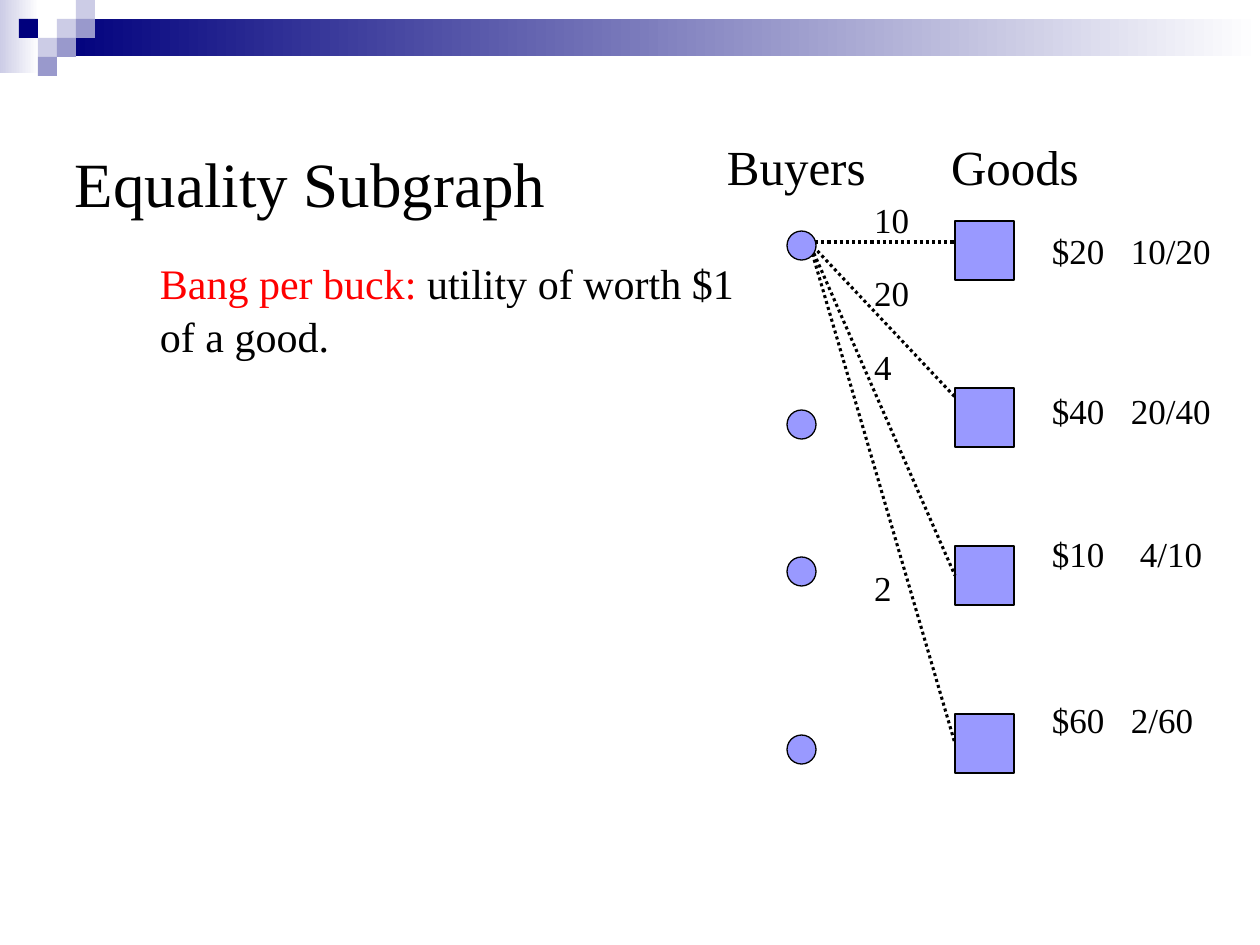
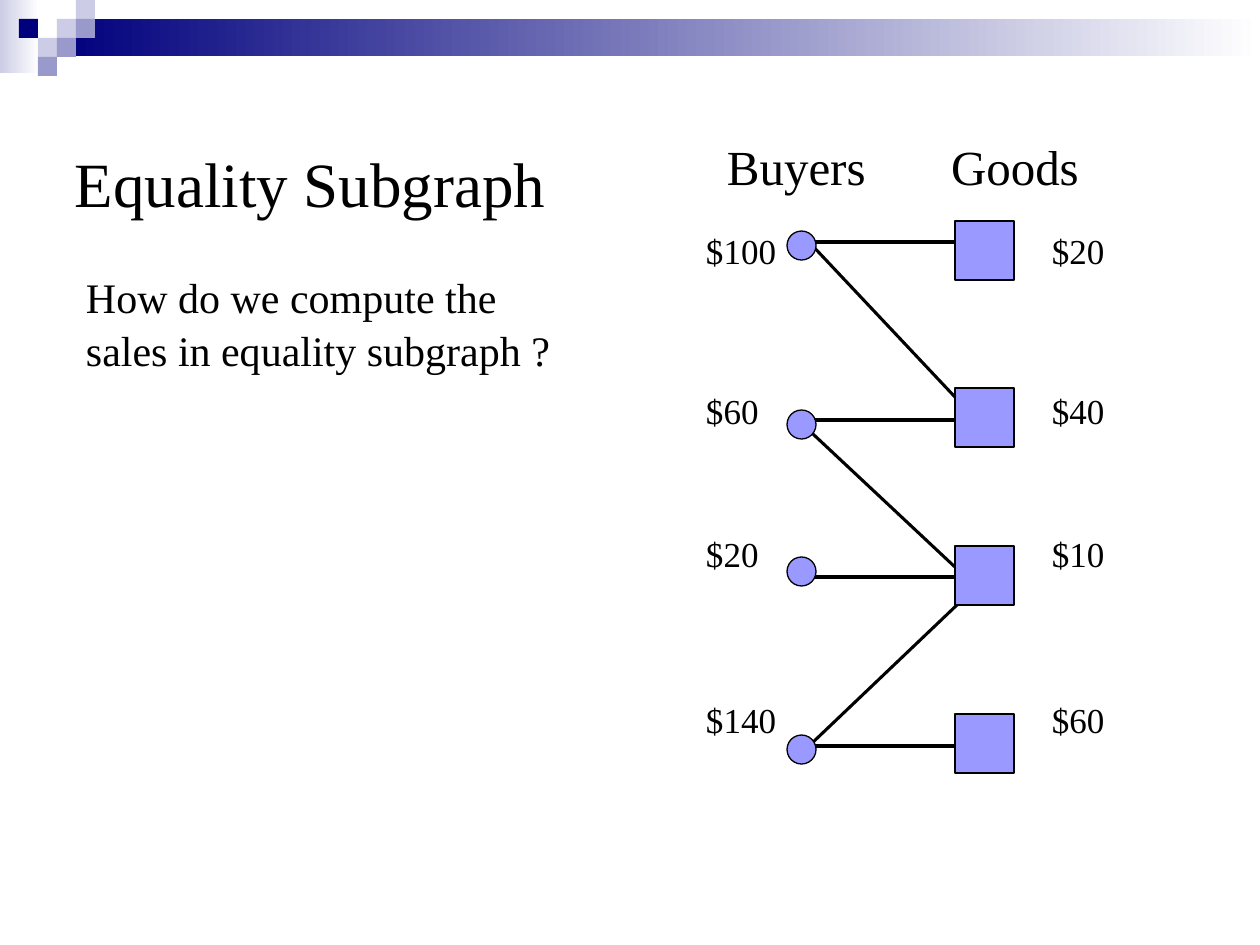
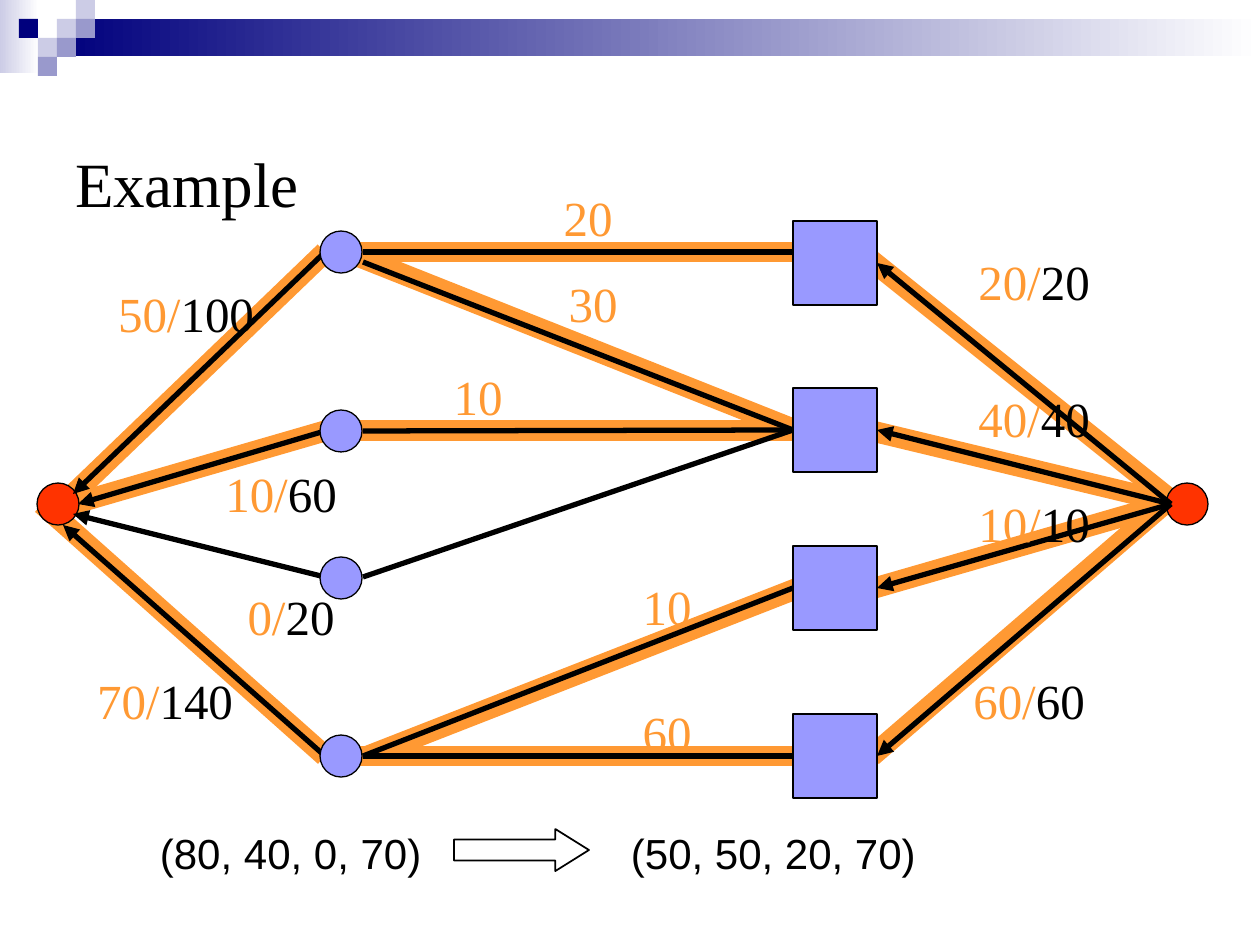
from lxml.etree import SubElement
from pptx import Presentation
from pptx.dml.color import RGBColor
from pptx.enum.dml import MSO_LINE
from pptx.enum.shapes import MSO_CONNECTOR, MSO_SHAPE
from pptx.enum.text import MSO_ANCHOR, PP_ALIGN
from pptx.oxml.ns import qn
from pptx.util import Pt

PX = 914400 / 126
hue = RGBColor.from_string
BLACK, RED, ORANGE, NODE, HUB = "000000", "FF0000", "FF9933", "9999FF", "FF3300"
NAVY, PALE, MID, WHITE = "00007D", "CCCCE6", "9999CC", "FFFFFF"
LEFT, CENTER = PP_ALIGN.LEFT, PP_ALIGN.CENTER
SERIF, SANS = "Times New Roman", "Arial"
FRAME = dict(word_wrap=True, vertical_anchor=MSO_ANCHOR.MIDDLE,
             margin_left=0, margin_right=0, margin_top=0, margin_bottom=0)
TILES = [(3, 1, PALE), (4, 0, PALE), (4, 1, MID), (2, 2, PALE),
         (1, 1, NAVY), (3, 2, MID), (2, 3, MID)]
TILE = 19

# Rows shared by the three graphs
GOODS = [221, 388, 546, 714]
BUYERS = [231, 410, 557, 735]
PRICES = [250, 411, 554, 720]


def box(slide, kind, x, y, wide, tall, fills=(), edge=None):
    """Draw a shape: no fill colour is hollow, two make a gradient."""
    shape = slide.shapes.add_shape(kind, *(round(v * PX) for v in (x, y, wide, tall)))
    shape.shadow.inherit = False
    if len(fills) == 2:
        shape.fill.gradient()
        shape.fill.gradient_angle = 0
        for stop, shade in zip(shape.fill.gradient_stops, fills):
            stop.color.rgb = hue(shade)
        for stop, place in zip(shape.fill.gradient_stops, (0, 1)):
            stop.position = place
    elif fills:
        shape.fill.solid()
        shape.fill.fore_color.rgb = hue(fills[0])
    else:
        shape.fill.background()
    if edge:
        shape.line.color.rgb = hue(BLACK)
        shape.line.width = Pt(edge)
    else:
        shape.line.fill.background()
    return shape


def stroke(slide, ends, shade, width, dash=None, head=False):
    line = slide.shapes.add_connector(MSO_CONNECTOR.STRAIGHT, *(round(v * PX) for v in ends))
    line.line.color.rgb = hue(shade)
    line.line.width = Pt(width)
    if dash:
        line.line.dash_style = dash
    props = line._element.spPr
    if head:
        SubElement(props.find(qn("a:ln")), qn("a:tailEnd"), type="triangle")
    SubElement(props, qn("a:effectLst"))
    return line


# Text: left, middle, width, lines, size, align, font, runs
heads = [(x, 166, 180, 1, 28, LEFT, SERIF, [(word, BLACK)])
         for x, word in [(727, "Buyers"), (951, "Goods")]]
title = (75, 182, 580, 1, 36, LEFT, SERIF, [("Equality Subgraph", BLACK)])
prices = [(1052, y, 75, 1, 20, LEFT, SERIF, [(word, BLACK)])
          for y, word in zip(PRICES, ["$20", "$40", "$10", "$60"])]
bangs = [(x, y, 100, 1, 20, LEFT, SERIF, [(word, BLACK)])
         for x, y, word in zip([1131, 1131, 1140, 1131], PRICES,
                               ["10/20", "20/40", "4/10", "2/60"])]
worths = [(874, y, 70, 1, 20, LEFT, SERIF, [(word, BLACK)])
          for y, word in [(219, "10"), (293, "20"), (367, "4"), (588, "2")]]
funds = [(706, y, 80, 1, 20, LEFT, SERIF, [(word, BLACK)])
         for y, word in zip(PRICES, ["$100", "$60", "$20", "$140"])]
flows = [(x, y, 158, 1, 28, CENTER, SERIF, [(used, ORANGE), (cap, BLACK)])
         for x, y, used, cap in [
             (107, 313, "50/", "100"), (202, 493, "10/", "60"), (212, 616, "0/", "20"),
             (86, 700, "70/", "140"), (955, 281, "20/", "20"), (955, 418, "40/", "40"),
             (955, 523, "10/", "10"), (950, 700, "60/", "60"), (588, 606, "10", ""),
             (588, 732, "60", ""), (514, 303, "30", ""), (399, 396, "10", ""),
             (509, 217, "20", "")]]
sums = [(x, 853, 300, 1, 24, LEFT, SANS, [(word, BLACK)])
        for x, word in [(160, "(80, 40, 0, 70)"), (631, "(50, 50, 20, 70)")]]

DOTS = dict(shade=BLACK, width=1.75, dash=MSO_LINE.ROUND_DOT)
THIN = dict(shade=BLACK, width=1.75)
BOLD = dict(shade=BLACK, width=3)
ARROW = dict(shade=BLACK, width=3, head=True)
FLOW = dict(shade=ORANGE, width=12)

# Lines: two ends, then the square and side they join, if any
pages = [
    dict(goods=(955, 59), buyers=(787, 29),
         lines=[(DOTS, [(809, 242, 955, 242), (809, 242, 955, 397),
                        (809, 242, 955, 576, 2, 1), (809, 242, 955, 744, 3, 1)])],
         texts=[title, *heads, *prices, *bangs, *worths,
                (160, 308, 580, 2, 24, LEFT, SERIF,
                 [("Bang per buck:", RED), (" utility of worth $1 of a good.", BLACK)])]),
    dict(goods=(955, 59), buyers=(787, 29),
         lines=[(THIN, [(809, 242, 955, 242), (809, 242, 955, 397), (809, 420, 955, 420),
                        (798, 420, 955, 567), (798, 577, 955, 577),
                        (809, 746, 957, 605), (809, 746, 955, 746)])],
         texts=[title, *heads, *prices, *funds,
                (86, 322, 479, 2, 24, LEFT, SERIF,
                 [("How do we compute the sales in equality subgraph ?", BLACK)])]),
    dict(goods=(793, 84), buyers=(320, 42), hubs=[37, 1166], arrow=(454, 829, 135, 42),
         flows=[(325, 252, 63, 504), (325, 431, 73, 504), (325, 756, 42, 504),
                (798, 252, 347, 252), (798, 431, 347, 252), (819, 431, 347, 431),
                (798, 588, 368, 756), (799, 756, 336, 756),
                (1176, 504, 861, 252), (1176, 504, 872, 431),
                (1166, 504, 840, 598), (1176, 494, 872, 756)],
         lines=[(BOLD, [(363, 252, 793, 252),
                        *((363, y, 793, GOODS[good] + 42, good, 1) for y, good in
                          [(262, 1), (431, 1), (577, 1), (756, 2), (756, 3)])]),
                (ARROW, [(325, 252, 73, 494), (325, 431, 78, 504),
                         (325, 577, 73, 514), (325, 756, 63, 525),
                         *((1171, 504, 877, y + 42, good, 3)
                           for good, y in enumerate(GOODS))])],
         texts=[(75, 182, 1100, 1, 36, LEFT, SERIF, [("Example", BLACK)]), *flows, *sums]),
]

deck = Presentation()
deck.slide_width, deck.slide_height = round(1260 * PX), round(945 * PX)

for page in pages:
    slide = deck.slides.add_slide(deck.slide_layouts[6])

    # Band
    box(slide, MSO_SHAPE.RECTANGLE, 0, 0, 39, 73, (PALE, WHITE))
    box(slide, MSO_SHAPE.RECTANGLE, 57, 19, 1203, 37, (NAVY, WHITE))
    for col, row, shade in TILES:
        box(slide, MSO_SHAPE.RECTANGLE, col * TILE, row * TILE, TILE, TILE, [shade])

    # Graph
    for ends in page.get("flows", []):
        stroke(slide, ends, **FLOW)
    x, size = page["goods"]
    squares = [box(slide, MSO_SHAPE.RECTANGLE, x, y, size, size, [NODE], 0.75) for y in GOODS]
    for x in page.get("hubs", []):
        box(slide, MSO_SHAPE.OVAL, x, 483, 42, 42, [HUB], 0.75)
    for style, lines in page["lines"]:
        for *ends, in lines:
            line = stroke(slide, ends[:4], **style)
            if ends[4:]:
                good, side = ends[4:]
                line.end_connect(squares[good], side)
    x, size = page["buyers"]
    for y in BUYERS:
        box(slide, MSO_SHAPE.OVAL, x, y, size, size, [NODE], 0.75)
    if "arrow" in page:
        arrow = box(slide, MSO_SHAPE.RIGHT_ARROW, *page["arrow"], edge=1)
        arrow.adjustments[1] = 0.8

    # Text
    for x, mid, wide, rows, size, align, font, runs in page["texts"]:
        tall = 2 * size * rows
        place = (x, mid - tall // 2, wide, tall)
        frame = slide.shapes.add_textbox(*(round(v * PX) for v in place)).text_frame
        for name, value in FRAME.items():
            setattr(frame, name, value)
        para = frame.paragraphs[0]
        para.alignment = align
        if rows > 1:
            para.line_spacing = 1.06
        for word, shade in runs:
            if word:
                run = para.add_run()
                run.text = word
                run.font.name, run.font.size = font, Pt(size)
                run.font.color.rgb = hue(shade)

deck.save("out.pptx")
